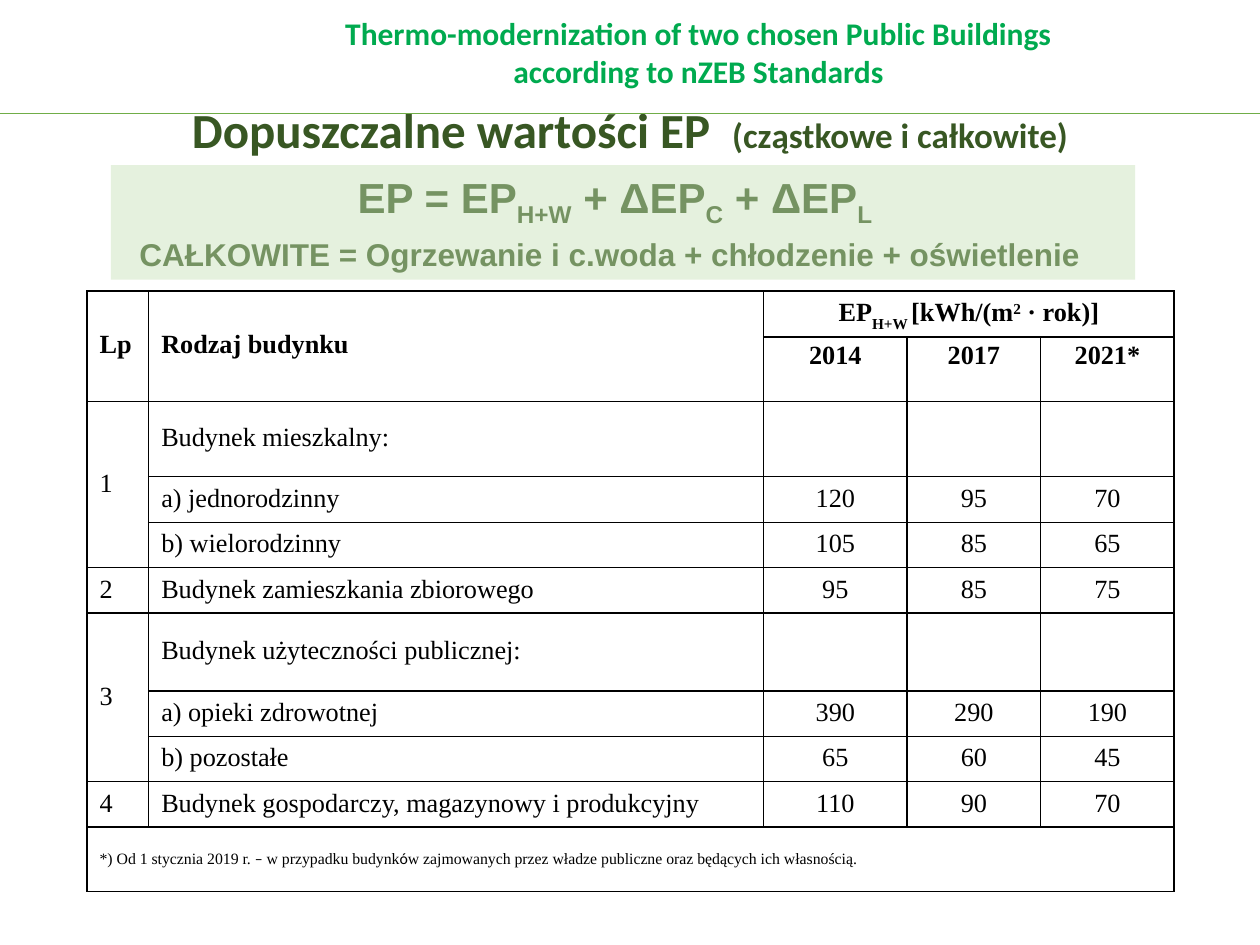
from dataclasses import dataclass, replace

from lxml import etree
from pptx import Presentation
from pptx.dml.color import RGBColor
from pptx.enum.shapes import MSO_CONNECTOR, MSO_SHAPE
from pptx.enum.text import MSO_ANCHOR, MSO_AUTO_SIZE, PP_ALIGN
from pptx.oxml.ns import qn
from pptx.util import Inches, Pt

CENTER, LEFT = PP_ALIGN.CENTER, PP_ALIGN.LEFT
MIDDLE, TOP, BOTTOM = MSO_ANCHOR.MIDDLE, MSO_ANCHOR.TOP, MSO_ANCHOR.BOTTOM
RECTANGLE, STRAIGHT = MSO_SHAPE.RECTANGLE, MSO_CONNECTOR.STRAIGHT
NO_AUTOFIT = MSO_AUTO_SIZE.NONE
SLIDE_W, SLIDE_H = Inches(10), Inches(7.5)
COL, ROW = SLIDE_W / 100, SLIDE_H / 75  # layout grid of 100 columns by 75 rows
TITLE_ONLY = 5


@dataclass(frozen=True)
class Style:
    font: str
    size: float
    color: str
    bold: bool = False
    baseline: int = 0


@dataclass(frozen=True)
class Theme:
    header: Style = Style("Calibri", 18, "00AA4F", True)
    title: Style = Style("Calibri", 28, "385723", True)
    subtitle: Style = Style("Calibri", 20, "385723", True)
    formula: Style = Style("Arial", 24, "385723", True)
    legend: Style = Style("Arial", 18, "385723", True)
    head: Style = Style("Times New Roman", 15, "000000", True)
    body: Style = Style("Times New Roman", 15, "000000")
    note: Style = Style("Times New Roman", 9, "000000")
    rule: str = "70AD47"
    band: str = "C5E0B4"
    border: str = "000000"
    band_opacity: int = 44


THEME = Theme()


@dataclass(frozen=True)
class Box:
    """An area in grid columns and rows."""
    left: float
    top: float
    width: float
    height: float

    def emu(self):
        return (int(self.left * COL), int(self.top * ROW),
                int(self.width * COL), int(self.height * ROW))


def write(paragraph, pieces, align):
    """Fill a paragraph with (text, style) runs."""
    paragraph.alignment = align
    for text, style in pieces:
        run = paragraph.add_run()
        run.text = text
        run.font.name = style.font
        run.font.size = Pt(style.size)
        run.font.bold = style.bold
        run.font.color.rgb = RGBColor.from_string(style.color)
        if style.baseline:
            run.font._element.set("baseline", str(style.baseline * 1000))


def add_text(slide, box, lines, align):
    frame = slide.shapes.add_textbox(*box.emu()).text_frame
    frame.word_wrap = True
    for index, pieces in enumerate(lines):
        paragraph = frame.add_paragraph() if index else frame.paragraphs[0]
        write(paragraph, pieces, align)


def add_header(slide, box):
    lines = ["Thermo-modernization of two chosen Public Buildings",
             "according to nZEB Standards"]
    add_text(slide, box, [[(line, THEME.header)] for line in lines], CENTER)
    # Full-width rule below the header
    rule_y = int(9 * ROW)
    rule = slide.shapes.add_connector(STRAIGHT, 0, rule_y, SLIDE_W, rule_y)
    rule.line.color.rgb = RGBColor.from_string(THEME.rule)
    rule.line.width = Pt(0.75)
    etree.SubElement(rule._element.spPr, qn("a:effectLst"))


def add_title(slide, box):
    title = slide.shapes.title
    title.left, title.top, title.width, title.height = box.emu()
    frame = title.text_frame
    frame.auto_size = NO_AUTOFIT
    frame.vertical_anchor = BOTTOM
    paragraph = frame.paragraphs[0]
    paragraph.line_spacing = 0.9
    write(paragraph, [("Dopuszczalne wartości EP  ", THEME.title),
                      ("(cząstkowe i całkowite)", THEME.subtitle)], CENTER)


def add_formula(slide, box):
    plain = THEME.formula
    sub = replace(plain, baseline=-25)
    pieces = [("EP = EP", plain), ("H+W", sub), (" + ΔEP", plain),
              ("C", sub), (" + ΔEP", plain), ("L", sub)]
    add_text(slide, Box(box.left + 18.6, box.top, 49.9, 5), [pieces], LEFT)
    legend = "CAŁKOWITE = Ogrzewanie i c.woda + chłodzenie + oświetlenie "
    add_text(slide, Box(0, box.top + 5.1, 97.5, 4), [[(legend, THEME.legend)]], CENTER)
    # Translucent band laid over both lines
    band = slide.shapes.add_shape(RECTANGLE, *box.emu())
    band.shadow.inherit = False
    band.line.fill.background()
    band.fill.solid()
    band.fill.fore_color.rgb = RGBColor.from_string(THEME.band)
    color = band._element.spPr.find(qn("a:solidFill"))[0]
    etree.SubElement(color, qn("a:alpha"), val=str(THEME.band_opacity * 1000))


COLUMN_WIDTHS = [4.9, 48.8, 11.4, 10.6, 10.6]
ROW_HEIGHTS = [3.6, 5.1, 6, 3.6, 3.6, 3.6, 6.2, 3.6, 3.6, 3.6, 5.1]
YEARS = ["2014", "2017", "2021*"]
BUILDINGS = [
    ("1", "Budynek mieszkalny:"),
    ("", "a) jednorodzinny", 120, 95, 70),
    ("", "b) wielorodzinny", 105, 85, 65),
    ("2", "Budynek zamieszkania zbiorowego", 95, 85, 75),
    ("3", "Budynek użyteczności publicznej:"),
    ("", "a) opieki zdrowotnej", 390, 290, 190),
    ("", "b) pozostałe", 65, 60, 45),
    ("4", "Budynek gospodarczy, magazynowy i produkcyjny", 110, 90, 70),
]
MERGES = [(0, 0, 1, 0), (0, 1, 1, 1), (0, 2, 0, 4),
          (2, 0, 4, 0), (6, 0, 8, 0), (10, 0, 10, 4)]
THIN_BELOW, THIN_ABOVE = {2, 3, 6, 7}, {3, 4, 7, 8}  # lines inside a building group


def set_borders(cell, row, column):
    cell.fill.background()
    properties = cell._tc.get_or_add_tcPr()
    grouped = column > 0
    widths = {"lnL": 1, "lnR": 1,
              "lnT": 0.75 if grouped and row in THIN_ABOVE else 1,
              "lnB": 0.75 if grouped and row in THIN_BELOW else 1}
    for index, (side, width) in enumerate(widths.items()):
        line = etree.Element(qn(f"a:{side}"), w=str(Pt(width)))
        fill = etree.SubElement(line, qn("a:solidFill"))
        etree.SubElement(fill, qn("a:srgbClr"), val=THEME.border)
        properties.insert(index, line)


def fill_cell(cell, pieces, align=LEFT, anchor=MIDDLE):
    cell.vertical_anchor = anchor
    paragraph = cell.text_frame.paragraphs[0]
    paragraph.line_spacing = 0.9
    indent = Inches(0.25)
    properties = paragraph._p.get_or_add_pPr()
    properties.set("marL", str(indent))
    properties.set("indent", str(-indent))
    write(paragraph, pieces, align)


def add_limits_table(slide, box):
    table = slide.shapes.add_table(len(ROW_HEIGHTS), len(COLUMN_WIDTHS), *box.emu()).table
    table.first_row = table.horz_banding = False
    for column, width in zip(table.columns, COLUMN_WIDTHS):
        column.width = int(width * COL)
    for row, height in zip(table.rows, ROW_HEIGHTS):
        row.height = int(height * ROW)
    for r in range(len(ROW_HEIGHTS)):
        for c in range(len(COLUMN_WIDTHS)):
            set_borders(table.cell(r, c), r, c)
    for top, left, bottom, right in MERGES:
        table.cell(top, left).merge(table.cell(bottom, right))

    # Column heads
    head = THEME.head
    fill_cell(table.cell(0, 0), [("Lp", head)])
    fill_cell(table.cell(0, 1), [("Rodzaj budynku", head)])
    unit = [("EP", head), ("H+W ", replace(head, baseline=-30)), ("[kWh/(m", head),
            ("2", replace(head, baseline=30)), (" · rok)]", head)]
    fill_cell(table.cell(0, 2), unit, CENTER)
    for c, year in enumerate(YEARS, 2):
        fill_cell(table.cell(1, c), [(year, head)], CENTER, TOP)

    # Building types and their limits
    for r, building in enumerate(BUILDINGS, 2):
        for c, value in enumerate(building):
            if value:
                align = CENTER if c > 1 else LEFT
                fill_cell(table.cell(r, c), [(str(value), THEME.body)], align)

    # Footnote
    note = THEME.note
    accent = replace(note, font="Calibri")
    fill_cell(table.cell(10, 0), [
        ("*) Od 1 stycznia 2019 r. ", note), ("–", accent),
        (" w przypadku budynk", note), ("ó", accent),
        ("w zajmowanych przez władze publiczne oraz będących ich własnością.", note)])


def main():
    presentation = Presentation()
    presentation.slide_width, presentation.slide_height = SLIDE_W, SLIDE_H
    slide = presentation.slides.add_slide(presentation.slide_layouts[TITLE_ONLY])
    add_header(slide, Box(25.1, 0.6, 60.7, 7.1))
    add_title(slide, Box(6.9, 8.8, 86.2, 4.3))
    add_limits_table(slide, Box(6.9, 23.1, 86.2, 47.6))
    add_formula(slide, Box(8.8, 13.1, 81.3, 9.1))
    presentation.save("out.pptx")


if __name__ == "__main__":
    main()
